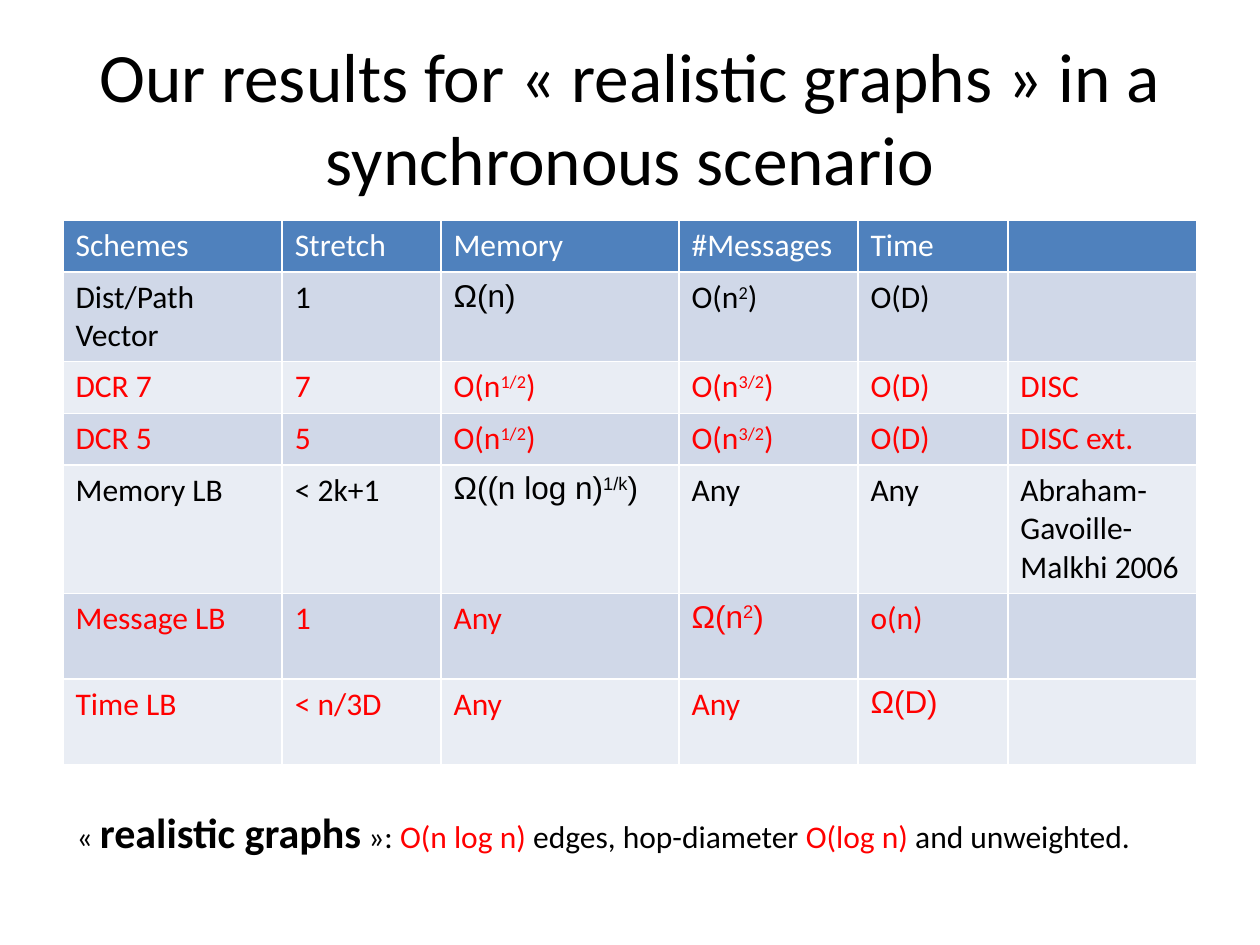
from pptx import Presentation
from pptx.dml.color import RGBColor
from pptx.util import Inches, Pt

BLACK = RGBColor(0, 0, 0)
WHITE = RGBColor(255, 255, 255)
RED = RGBColor(255, 0, 0)
BLUE = RGBColor(0x4F, 0x81, 0xBD)
BANDS = [RGBColor(0xE9, 0xED, 0xF4), RGBColor(0xD0, 0xD8, 0xE8)]

TITLE = "Our results for « realistic graphs » in a synchronous scenario"
COLS = [1.74, 1.26, 1.89, 1.42, 1.19, 1.5]
ROWS = [
    (0.41, WHITE, ["Schemes", "Stretch", "Memory", "#Messages", "Time", ""]),
    (0.71, BLACK, ["Dist/Path Vector", "1", "Ω(n)", "O(n^2^)", "O(D)", ""]),
    (0.41, RED, ["DCR 7", "7", "O(n^1/2^)", "O(n^3/2^)", "O(D)", "DISC"]),
    (0.41, RED, ["DCR 5", "5", "O(n^1/2^)", "O(n^3/2^)", "O(D)", "DISC ext."]),
    (1.02, BLACK, ["Memory LB", "< 2k+1", "Ω((n log n)^1/k^)", "Any", "Any",
                   "Abraham-Gavoille-Malkhi 2006"]),
    (0.68, RED, ["Message LB", "1", "Any", "Ω(n^2^)", "o(n)", ""]),
    (0.68, RED, ["Time LB", "< n/3D", "Any", "Any", "Ω(D)", ""]),
]
NOTE = [
    ("« ", 18, BLACK),
    ("realistic graphs", 24, BLACK),
    (" »: ", 18, BLACK),
    ("O(n log n) ", 18, RED),
    ("edges, hop-diameter ", 18, BLACK),
    ("O(log n)", 18, RED),
    (" and unweighted.", 18, BLACK),
]


def add_run(para, text, size, color, face="Calibri", bold=False):
    run = para.add_run()
    run.text = text
    font = run.font
    font.size, font.name, font.bold = Pt(size), face, bold
    font.color.rgb = color
    return run


def place(shape, *box):
    shape.left, shape.top, shape.width, shape.height = map(Inches, box)


def fill_cell(cell, text, color, back):
    cell.fill.solid()
    cell.fill.fore_color.rgb = back
    para = cell.text_frame.paragraphs[0]
    para.font.size = Pt(18)
    face = "Arial" if "Ω" in text else "Calibri"
    for i, part in enumerate(text.split("^")):
        if part:
            run = add_run(para, part, 18, color, face)
            if i % 2:
                run.font._element.set("baseline", "30000")


def main():
    deck = Presentation()
    deck.slide_width, deck.slide_height = Inches(10), Inches(7.5)
    slide = deck.slides.add_slide(deck.slide_layouts[5])

    title = slide.shapes.title
    place(title, 0.5, 0.3, 9, 1.25)
    add_run(title.text_frame.paragraphs[0], TITLE, 39.6, BLACK)

    high = sum(row[0] for row in ROWS)
    frame = slide.shapes.add_table(len(ROWS), len(COLS), 0, 0, 1, 1)
    place(frame, 0.5, 1.75, sum(COLS), high)
    table = frame.table
    for col, wide in zip(table.columns, COLS):
        col.width = Inches(wide)
    for r, (tall, color, texts) in enumerate(ROWS):
        table.rows[r].height = Inches(tall)
        back = BANDS[r % 2] if r else BLUE
        for c, text in enumerate(texts):
            fill_cell(table.cell(r, c), text, color, back)

    note = slide.shapes.add_textbox(0, 0, 1, 1)
    place(note, 0.51, 6.35, 8.98, 0.5)
    note.text_frame.word_wrap = True
    para = note.text_frame.paragraphs[0]
    for text, size, color in NOTE:
        add_run(para, text, size, color, bold=size > 18)

    deck.save("out.pptx")


if __name__ == "__main__":
    main()
